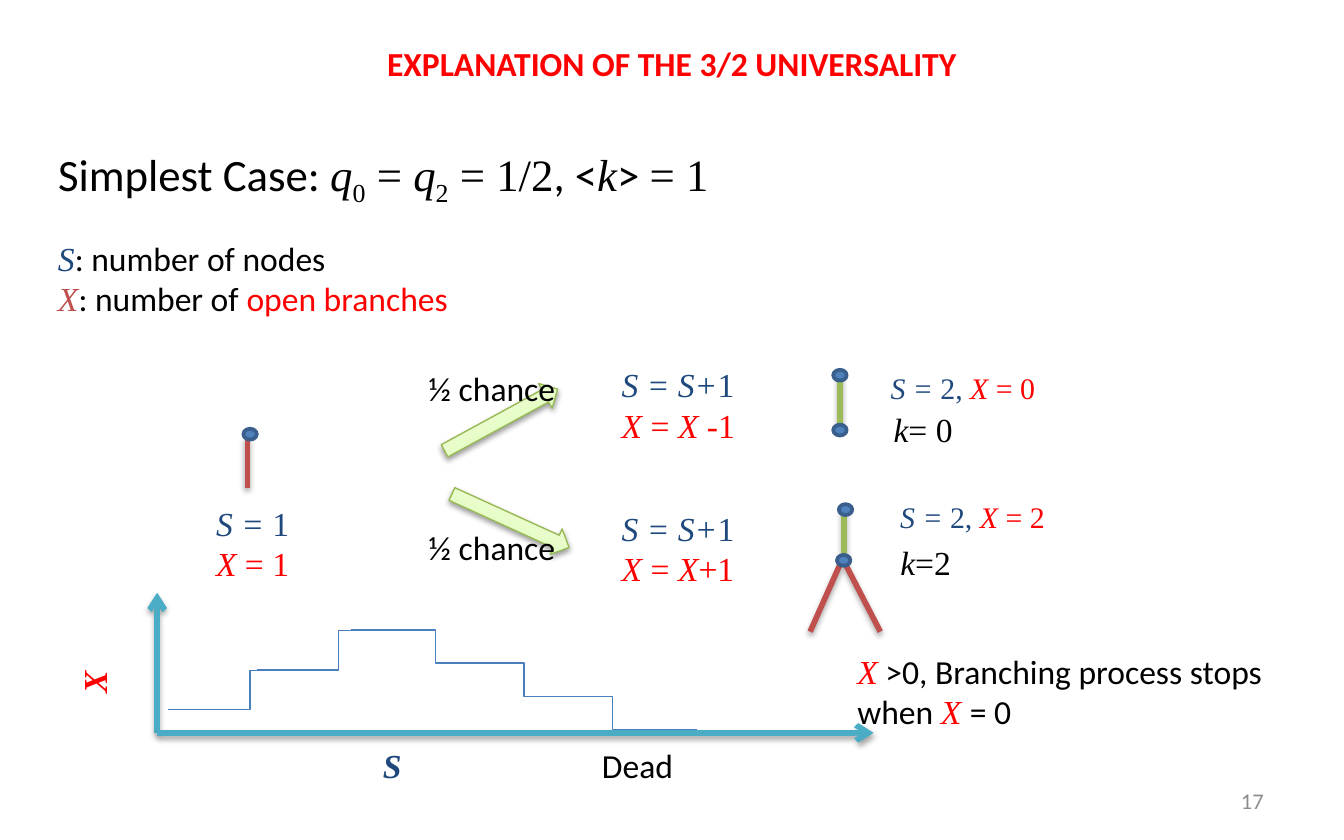
from lxml import etree
from pptx import Presentation, util as u
from pptx.dml.color import RGBColor
from pptx.enum import shapes, text
from pptx.oxml import parse_xml
from pptx.oxml.ns import nsdecls, qn

COLOURS = {
    "black": "000000", "red": "FF0000", "navy": "1F497D", "brick": "C0504D",
    "green": "9BBB59", "teal": "4BACC6", "step": "4B7EBC", "node": "4F81BD",
    "node edge": "3A5F8C", "arrow edge": "98B955", "grey": "8C8C8C",
}
ARROW_STOPS = ((0, "DAFDA7"), (35, "E4FCC2"), (100, "F5FFE7"))
FACES = {
    "plain": {"name": "Calibri"},
    "title": {"name": "Calibri", "bold": True},
    "maths": {"name": "Times New Roman"},
    "variable": {"name": "Times New Roman", "italic": True},
    "axis": {"name": "Times New Roman", "italic": True, "bold": True},
    "subscript": {"name": "Times New Roman"},
}


def rgb(colour):
    return RGBColor.from_string(COLOURS[colour])


def write(frame, paragraphs, size, alignment=None):
    """Fill a frame from paragraphs of (text, face, colour) runs."""
    for index, runs in enumerate(paragraphs):
        paragraph = frame.add_paragraph() if index else frame.paragraphs[0]
        paragraph.alignment = alignment
        for words, face, colour in runs:
            run = paragraph.add_run()
            run.text = words
            run.font.size = u.Pt(size)
            run.font.color.rgb = rgb(colour)
            for name, value in FACES[face].items():
                setattr(run.font, name, value)
            if face == "subscript":
                run.font._element.set("baseline", "-25000")


def add_text(slide, box, paragraphs, size=18, wrap=False, **frame_format):
    """Add a text box; box is left, top, width, height in points."""
    shape = slide.shapes.add_textbox(*map(u.Pt, box))
    settings = {"word_wrap": wrap, "auto_size": text.MSO_AUTO_SIZE.SHAPE_TO_FIT_TEXT}
    for name, value in settings.items():
        setattr(shape.text_frame, name, value)
    write(shape.text_frame, paragraphs, size, **frame_format)
    return shape


def set_shadow(shape, alpha=None, distance=1.8):
    """Give a soft shadow below the shape, or none without alpha."""
    effects = etree.SubElement(shape._element.spPr, qn("a:effectLst"))
    if alpha:
        effects.append(parse_xml(
            f'<a:outerShdw {nsdecls("a")} blurRad="{u.Pt(3.1)}" dist="{u.Pt(distance)}" '
            f'dir="5400000" rotWithShape="0"><a:srgbClr val="000000">'
            f'<a:alpha val="{alpha * 1000}"/></a:srgbClr></a:outerShdw>'))


def add_line(slide, start, end, colour, arrow=False):
    line = slide.shapes.add_connector(
        shapes.MSO_CONNECTOR.STRAIGHT, *map(u.Pt, (*start, *end)))
    line.line.color.rgb = rgb(colour)
    line.line.width = u.Pt(3)
    if arrow:
        etree.SubElement(line.line._get_or_add_ln(), qn("a:tailEnd"), type="arrow")
    set_shadow(line, 35)


def add_step(slide, start, end):
    step = slide.shapes.add_connector(
        shapes.MSO_CONNECTOR.ELBOW, *map(u.Pt, (*start, *end)))
    step.line.color.rgb = rgb("step")
    step.line.width = u.Pt(0.75)
    set_shadow(step)


def add_node(slide, x, y):
    width, height = 7.2, 5.8
    node = slide.shapes.add_shape(
        shapes.MSO_SHAPE.OVAL,
        *map(u.Pt, (x - width / 2, y - height / 2, width, height)))
    node.shadow.inherit = False
    node.fill.solid()
    node.fill.fore_color.rgb = rgb("node")
    node.line.color.rgb = rgb("node edge")
    node.line.width = u.Pt(2)


def add_block_arrow(slide, left, top, rotation):
    arrow = slide.shapes.add_shape(
        shapes.MSO_SHAPE.RIGHT_ARROW, *map(u.Pt, (left, top, 69, 15)))
    arrow.rotation = rotation
    stops = "".join(f'<a:gs pos="{place * 1000}"><a:srgbClr val="{colour}"/></a:gs>'
                    for place, colour in ARROW_STOPS)
    arrow.line.color.rgb = rgb("arrow edge")
    arrow.line.width = u.Pt(0.75)
    arrow._element.spPr.find(qn("a:ln")).addprevious(parse_xml(
        f'<a:gradFill {nsdecls("a")} rotWithShape="1"><a:gsLst>{stops}</a:gsLst>'
        '<a:lin ang="16200000" scaled="0"/></a:gradFill>'))
    set_shadow(arrow, 38, 1.6)


def add_state(slide, box, s_runs, x_runs):
    """Add the S line in navy above the X line in red."""
    add_text(slide, box, [[(words, face, "navy") for words, face in s_runs],
                          [(words, face, "red") for words, face in x_runs]])


def add_outcome(slide, state_place, k_place, x_value, k_words):
    add_text(slide, (*state_place, 94, 27), [[
        ("S = ", "variable", "navy"), ("2, ", "maths", "navy"),
        ("X", "variable", "red"), (f" = {x_value}", "maths", "red")]], 16)
    add_text(slide, (*k_place, 46, 29), [[
        ("k", "variable", "black"), (k_words, "maths", "black")]])


def add_heading(slide):
    title = slide.shapes.title
    for name, value in zip(("left", "top", "width", "height"), (0, 20, 720, 27.5)):
        setattr(title, name, u.Pt(value))
    title.text_frame.vertical_anchor = text.MSO_ANCHOR.MIDDLE
    write(title.text_frame, [[("EXPLANATION OF THE 3/2 UNIVERSALITY", "title", "red")]],
          18, text.PP_ALIGN.CENTER)
    case = (("Simplest Case: ", "plain"), ("q", "variable"), ("0", "subscript"),
            (" = ", "maths"), ("q", "variable"), ("2", "subscript"),
            (" = 1/2", "maths"), (", <", "plain"), ("k", "variable"),
            ("> ", "plain"), ("= 1", "maths"))
    add_text(slide, (24, 75, 406, 36),
             [[(words, face, "black") for words, face in case]], 24, True)
    add_text(slide, (24, 124, 227, 51), [
        [("S", "variable", "navy"), (": number of nodes", "plain", "black")],
        [("X", "variable", "brick"), (": number of ", "plain", "black"),
         ("open branches", "plain", "red")]])


def add_branching(slide):
    # Trees: open branches, links, then the nodes over them
    for start, end, colour in (
            ((132.5, 261.4), (132.5, 234), "brick"),
            ((434, 338.4), (450, 302.4), "brick"),
            ((471.6, 338.4), (452, 300.5), "brick"),
            ((450, 227.5), (450, 200), "green"),
            ((452, 300.5), (452, 272), "green")):
        add_line(slide, start, end, colour)
    for x, y in ((134, 232.6), (450, 230.4), (450, 201), (452, 300.2), (453, 273)):
        add_node(slide, x, y)

    # Chances
    add_block_arrow(slide, 234, 217.5, 331.4)
    add_block_arrow(slide, 239, 271.5, 24.5)
    for top in (193.7, 278.6):
        add_text(slide, (222.5, top, 132, 29), [[("½ chance", "plain", "black")]], wrap=True)

    # States before and after each chance
    add_state(slide, (108.7, 265.7, 55.4, 51), [("S = ", "variable"), ("1", "maths")],
              [("X", "variable"), (" = 1", "maths")])
    for top, x_name, change in ((191.5, "X ", "-1"), (268.5, "X", "+1")):
        add_state(slide, (326, top, 77, 51), [("S = S+", "variable"), ("1", "maths")],
                  [("X", "variable"), (" = ", "maths"),
                   (x_name, "variable"), (change, "maths")])
    add_outcome(slide, (470, 194.4), (471.6, 215.3), 0, "= 0")
    add_outcome(slide, (475.2, 263.5), (475.2, 286.6), 2, "=2")


def add_walk(slide):
    # Axes
    origin = (84.2, 392.6)
    add_line(slide, origin, (84.2, 317.5), "teal", arrow=True)
    add_line(slide, origin, (468, 392.6), "teal", arrow=True)
    add_text(slide, (452.2, 344.9, 232, 51), [[
        ("X", "variable", "red"),
        (" >0, Branching process stops when ", "plain", "black"),
        ("X ", "variable", "red"), ("= 0", "plain", "black")]], wrap=True)

    # Steps of the walk: two up, three down
    for start, end in (((90, 380.2), (178, 359.3)), ((137.5, 358.9), (225.5, 337.7))):
        add_step(slide, start, end)
    for index in range(3):
        left, top = 188 + 47.3 * index, 337.5 + 17.8 * index
        add_step(slide, (left, top), (left + 91, top + 17.8))

    # Axis names
    add_text(slide, (35.3, 349.2, 30.2, 29), [[("X", "axis", "red")]]).rotation = 270
    add_text(slide, (198, 395.3, 27.4, 29), [[("S", "axis", "navy")]])
    add_text(slide, (315.4, 395.3, 62, 29), [[("Dead", "plain", "black")]], wrap=True)


def main():
    presentation = Presentation()
    presentation.slide_width, presentation.slide_height = u.Pt(720), u.Pt(450)
    slide = presentation.slides.add_slide(presentation.slide_layouts[5])
    add_heading(slide)
    add_branching(slide)
    add_walk(slide)
    # Page number
    add_text(slide, (516, 418, 168, 22), [[("17", "plain", "grey")]], 12, True,
             alignment=text.PP_ALIGN.RIGHT)
    presentation.save("out.pptx")


if __name__ == "__main__":
    main()
